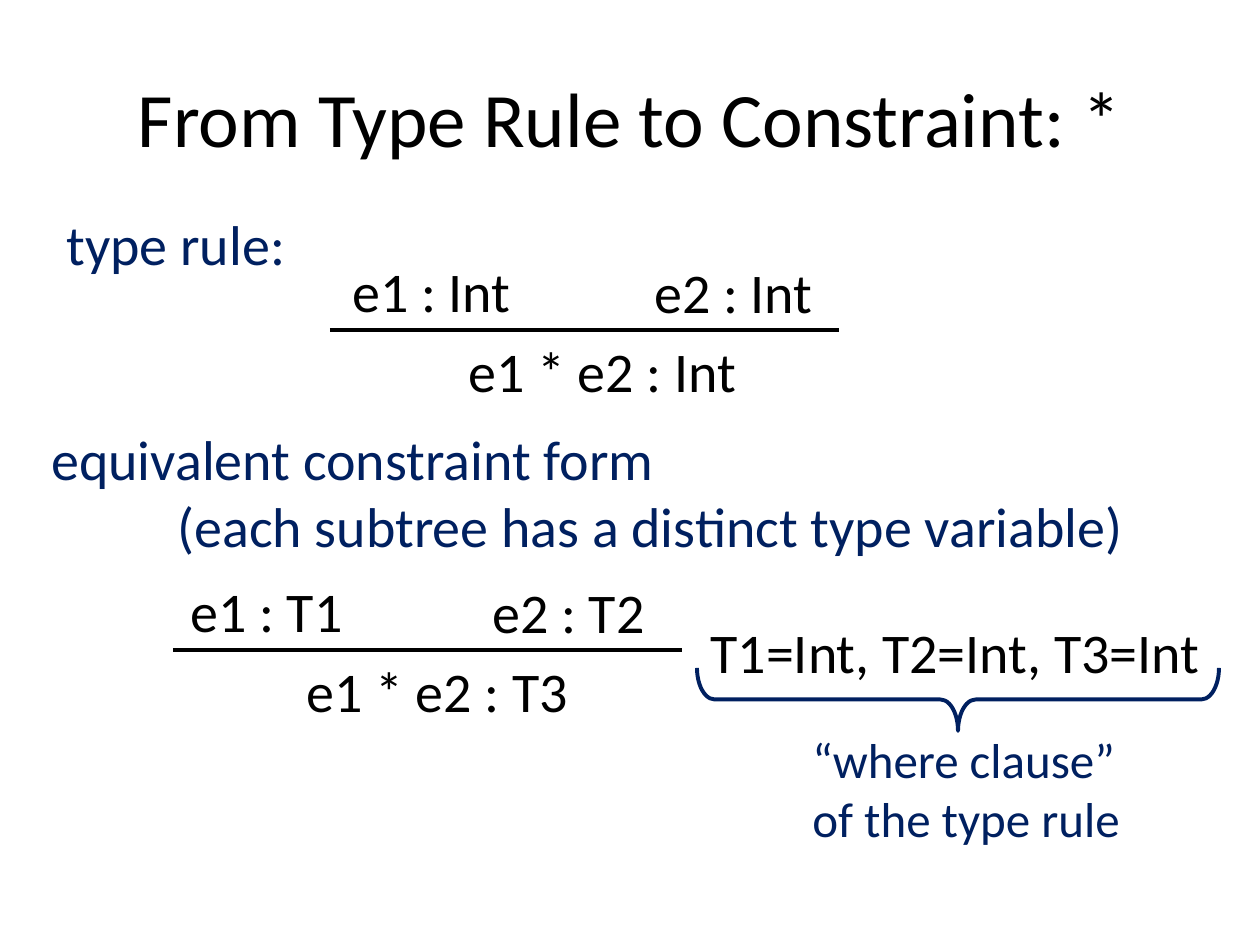
from dataclasses import dataclass

from lxml.etree import SubElement
from pptx import Presentation
from pptx.dml.color import RGBColor
from pptx.enum.shapes import MSO_CONNECTOR, MSO_SHAPE
from pptx.enum.text import MSO_ANCHOR, MSO_AUTO_SIZE, PP_ALIGN
from pptx.oxml.ns import qn
from pptx.util import Emu, Pt

PX_PER_INCH = 126


def px(length):
    return Emu(round(length * 914400 / PX_PER_INCH))


@dataclass(frozen=True)
class Theme:
    font: str = "Calibri"
    black: RGBColor = RGBColor(0x00, 0x00, 0x00)
    navy: RGBColor = RGBColor(0x00, 0x20, 0x60)
    title_size: int = 44
    body_size: int = 32
    note_size: int = 28
    line_width: float = 2.25


class SlideBuilder:
    def __init__(self, slide, theme):
        self.slide = slide
        self.theme = theme

    def format_runs(self, frame, size, color):
        for para in frame.paragraphs:
            for span in para.runs:
                span.font.name = self.theme.font
                span.font.size = Pt(size)
                span.font.color.rgb = color

    def title(self, text, left, top, width, height):
        box = self.slide.shapes.title
        box.left, box.top, box.width, box.height = map(px, (left, top, width, height))
        frame = box.text_frame
        frame.text = text
        frame.vertical_anchor = MSO_ANCHOR.MIDDLE
        frame.paragraphs[0].alignment = PP_ALIGN.CENTER
        self.format_runs(frame, self.theme.title_size, self.theme.black)

    def text(self, text, left, top, width, height=81, color=None, size=None):
        box = self.slide.shapes.add_textbox(*map(px, (left, top, width, height)))
        frame = box.text_frame
        frame.word_wrap = False
        frame.auto_size = MSO_AUTO_SIZE.SHAPE_TO_FIT_TEXT
        frame.text = text
        self.format_runs(frame, size or self.theme.body_size, color or self.theme.black)
        return frame

    def line(self, left, top, width):
        ends = map(px, (left, top, left + width, top))
        line = self.slide.shapes.add_connector(MSO_CONNECTOR.STRAIGHT, *ends)
        line.line.color.rgb = self.theme.black
        line.line.width = Pt(self.theme.line_width)
        SubElement(line._element.spPr, qn("a:effectLst"))

    def inference_rule(self, left, top, indent, premises, conclusion, widths):
        """Premises above a bar, with the conclusion below it."""
        premise_width, conclusion_width = widths
        text_left = left + indent
        self.line(left, top, 509)
        for index, premise in enumerate(premises):
            self.text(premise, text_left + 302 * index, top - 80 + index, premise_width)
        self.text(conclusion, text_left + 116, top, conclusion_width)

    def brace_below(self, left, top, width, height):
        """A right brace turned a quarter so that it points down."""
        turned_left = left + (width - height) / 2
        turned_top = top + (height - width) / 2
        brace = self.slide.shapes.add_shape(
            MSO_SHAPE.RIGHT_BRACE, *map(px, (turned_left, turned_top, height, width)))
        brace.rotation = 90
        brace.adjustments[0] = 0.28
        brace.adjustments[1] = 0.5
        brace.shadow.inherit = False
        brace.fill.background()
        brace.line.color.rgb = self.theme.navy
        brace.line.width = Pt(self.theme.line_width)


def main():
    deck = Presentation()
    deck.slide_width, deck.slide_height = px(1260), px(945)
    theme = Theme()
    page = SlideBuilder(deck.slides.add_slide(deck.slide_layouts[5]), theme)

    page.title("From Type Rule to Constraint: *", 63, 38, 1134, 157)

    # Type rule
    page.text("type rule:", 54, 203, 247, color=theme.navy)
    page.inference_rule(330, 330, 10, ("e1 : Int", "e2 : Int"), "e1 * e2 : Int", (185, 296))

    # Constraint form
    frame = page.text(
        "equivalent constraint form\n(each subtree has a distinct type variable)",
        39, 418, 1109, 149, color=theme.navy)
    frame.paragraphs[1]._p.get_or_add_pPr().set("marL", str(px(PX_PER_INCH)))
    page.inference_rule(173, 650, 5, ("e1 : T1", "e2 : T2"), "e1 * e2 : T3", (179, 290))

    # Where clause
    page.text("T1=Int, T2=Int, T3=Int", 698, 611, 522)
    page.brace_below(697, 668, 522, 63)
    page.text("“where clause”\nof the type rule", 800, 723, 336, 131,
              color=theme.navy, size=theme.note_size)

    deck.save("out.pptx")


if __name__ == "__main__":
    main()
